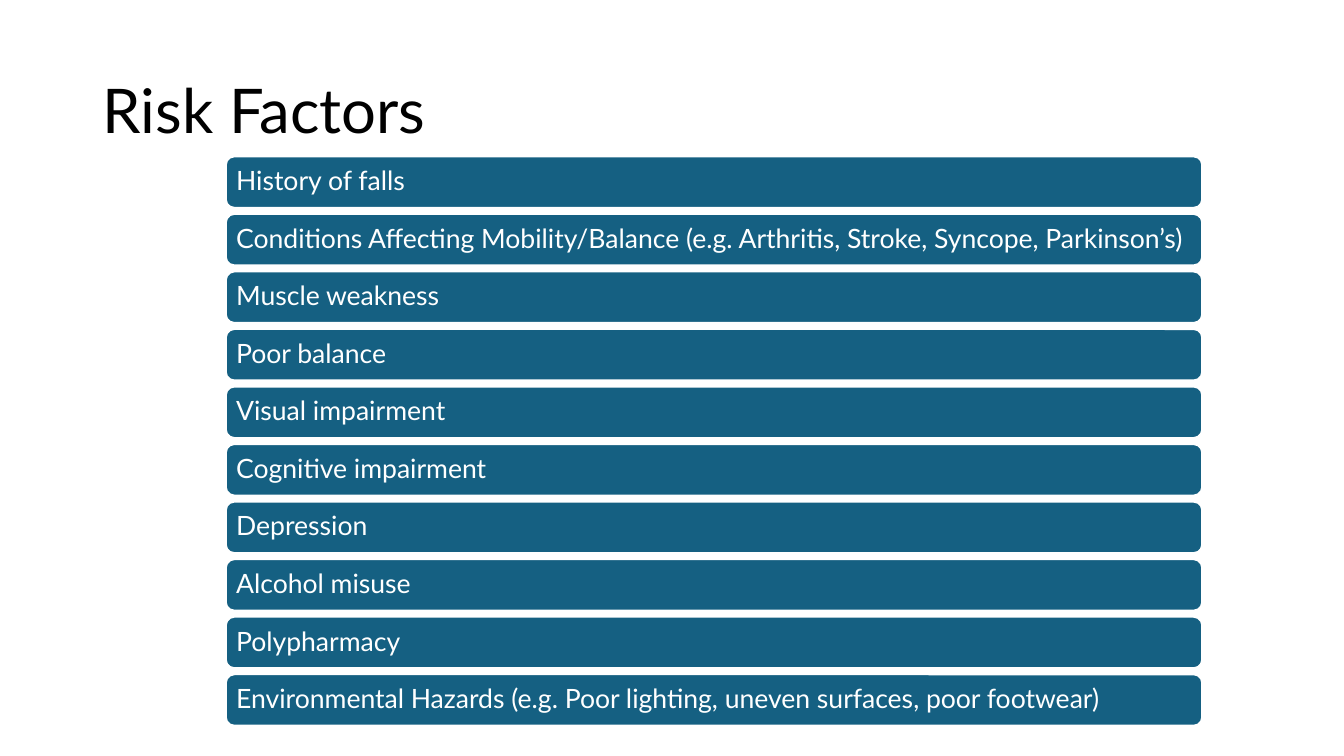
from pptx import Presentation
from pptx.dml.color import RGBColor
from pptx.enum.shapes import MSO_SHAPE
from pptx.enum.text import MSO_ANCHOR, PP_ALIGN
from pptx.util import Cm, Pt

ROUNDED = MSO_SHAPE.ROUNDED_RECTANGLE
MIDDLE = MSO_ANCHOR.MIDDLE
LEFT = PP_ALIGN.LEFT

# Content
HEADING = "Risk Factors"
RISK_FACTORS = [
    "History of falls",
    "Conditions Affecting Mobility/Balance (e.g. Arthritis, Stroke, Syncope, Parkinson’s)",
    "Muscle weakness",
    "Poor balance",
    "Visual impairment",
    "Cognitive impairment",
    "Depression",
    "Alcohol misuse",
    "Polypharmacy",
    "Environmental Hazards (e.g. Poor lighting, uneven surfaces, poor footwear)",
]

# Style and layout
FONT = "Lato"
COLORS = {"heading": "000000", "bar": "156082", "bar_text": "FFFFFF", "outline": "FFFFFF"}
BAR_LEFT, BAR_TOP = Cm(5.69), Cm(3.94)
BAR_WIDTH, BAR_HEIGHT = Cm(24.61), Cm(1.3)
BAR_PITCH = Cm(1.45)
BAR_INSET = Cm(0.2)


def color(role):
    return RGBColor.from_string(COLORS[role])


def write(frame, text, size, role):
    frame.word_wrap = True
    frame.vertical_anchor = MIDDLE
    frame.text = text
    paragraph = frame.paragraphs[0]
    paragraph.alignment = LEFT
    paragraph.line_spacing = 0.9
    paragraph.font.name = FONT
    paragraph.font.size = Pt(size)
    paragraph.font.color.rgb = color(role)


def add_bar(slide, position, factor):
    top = BAR_TOP + position * BAR_PITCH
    bar = slide.shapes.add_shape(ROUNDED, BAR_LEFT, top, BAR_WIDTH, BAR_HEIGHT)
    bar.shadow.inherit = False
    bar.fill.solid()
    bar.fill.fore_color.rgb = color("bar")
    bar.line.color.rgb = color("outline")
    bar.line.width = Pt(1.5)
    frame = bar.text_frame
    frame.margin_left = frame.margin_right = BAR_INSET
    frame.margin_top = frame.margin_bottom = BAR_INSET
    write(frame, factor, 19, "bar_text")


def main():
    deck = Presentation()
    deck.slide_width, deck.slide_height = Cm(33.87), Cm(19.05)
    slide = deck.slides.add_slide(deck.slide_layouts[5])

    # Title
    title = slide.shapes.title
    title.left, title.top = Cm(2.33), Cm(1.01)
    title.width, title.height = Cm(29.21), Cm(3.68)
    write(title.text_frame, HEADING, 44, "heading")

    # Stack of risk factor bars
    for position, factor in enumerate(RISK_FACTORS):
        add_bar(slide, position, factor)

    deck.save("out.pptx")


if __name__ == "__main__":
    main()
